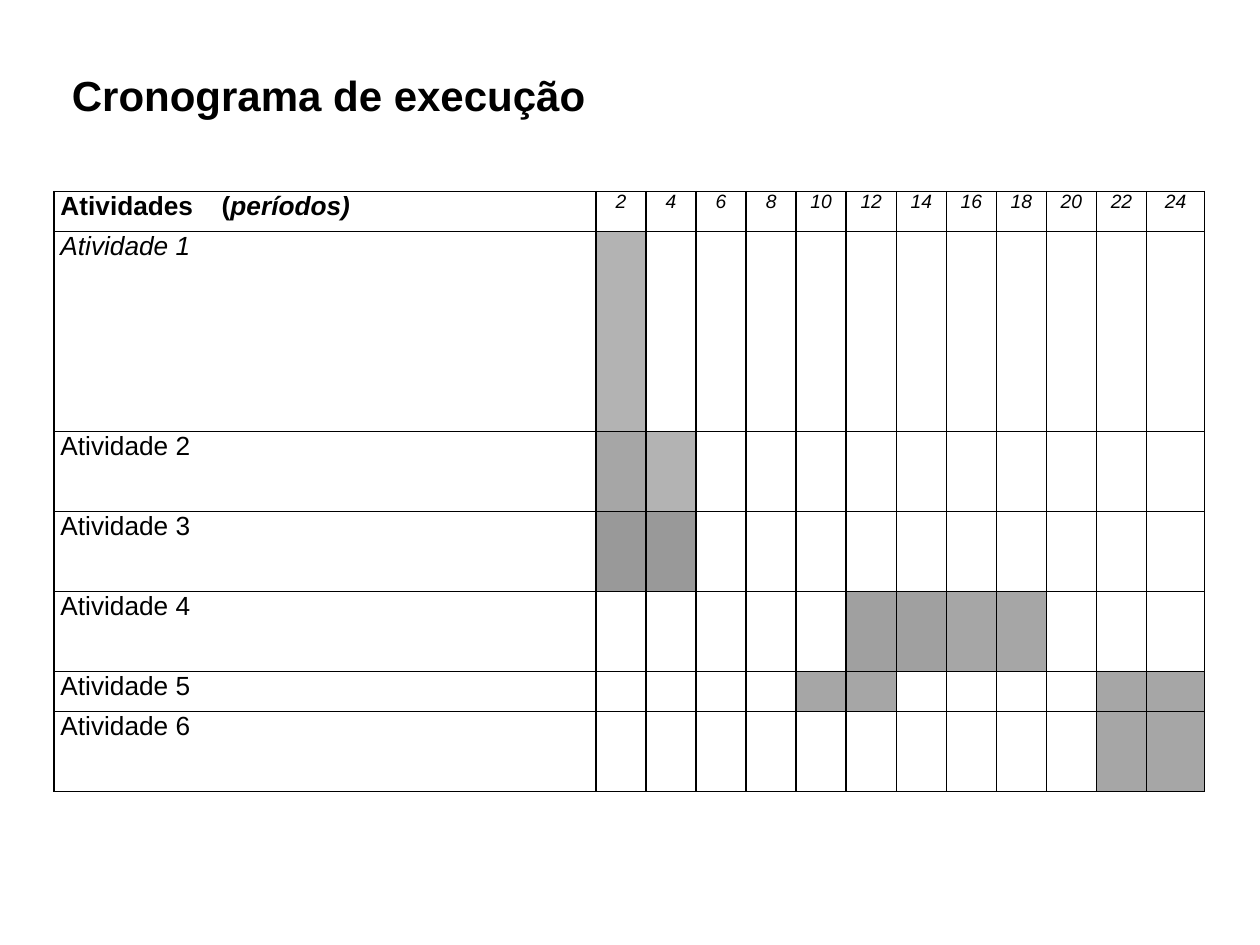
"""Builds a slide with an activity schedule drawn as a shaded table."""
from typing import NamedTuple

from lxml.etree import SubElement
from pptx import Presentation
from pptx.dml.color import RGBColor
from pptx.enum.text import MSO_ANCHOR, PP_ALIGN
from pptx.oxml.ns import qn
from pptx.util import Inches, Pt

FONT, INK, PAPER = "Arial", "000000", "FFFFFF"
LEFT, TOP, WIDTH, HEIGHT = 0.43, 1.52, 9.13, 4.76
NAME_WIDTH, LAST_WIDTH = 4.3, 0.46
PERIODS = range(2, 25, 2)
HEADER_UNITS = 1
CELL_FORMAT = {
    "margin_left": Inches(0.05),
    "margin_right": Inches(0.05),
    "margin_top": 0,
    "margin_bottom": 0,
    "vertical_anchor": MSO_ANCHOR.TOP,
}


class Activity(NamedTuple):
    name: str
    units: int
    shades: dict[int, str]
    italic: bool = False


ACTIVITIES = [
    Activity("Atividade 1", 5, {2: "B3B3B3"}, True),
    Activity("Atividade 2", 2, {2: "A6A6A6", 4: "B3B3B3"}),
    Activity("Atividade 3", 2, dict.fromkeys((2, 4), "999999")),
    Activity("Atividade 4", 2, {12: "A0A0A0", 14: "A0A0A0", 16: "A6A6A6", 18: "A6A6A6"}),
    Activity("Atividade 5", 1, dict.fromkeys((10, 12, 22, 24), "A6A6A6")),
    Activity("Atividade 6", 2, dict.fromkeys((22, 24), "A6A6A6")),
]


def color(value: str) -> RGBColor:
    return RGBColor.from_string(value)


def set_attributes(target, values: dict) -> None:
    for name, value in values.items():
        setattr(target, name, value)


def add_text(paragraph, text: str, size: float, bold: bool = False, italic: bool = False) -> None:
    run = paragraph.add_run()
    run.text = text
    set_attributes(run.font, {"name": FONT, "size": Pt(size), "bold": bold, "italic": italic})
    run.font.color.rgb = color(INK)


def add_borders(cell) -> None:
    properties = cell._tc.get_or_add_tcPr()
    for position, side in enumerate(("a:lnL", "a:lnR", "a:lnT", "a:lnB")):
        line = properties.makeelement(qn(side), {"w": str(Pt(1))})
        properties.insert(position, line)
        SubElement(SubElement(line, qn("a:solidFill")), qn("a:srgbClr"), val=INK)


def format_cell(cell, fill: str = PAPER) -> None:
    set_attributes(cell, CELL_FORMAT)
    cell.fill.solid()
    cell.fill.fore_color.rgb = color(fill)
    add_borders(cell)


def add_title(slide, text: str) -> None:
    title = slide.shapes.title
    box = {"left": 0.47, "top": 0.5, "width": 9.24, "height": 0.51}
    set_attributes(title, {name: Inches(value) for name, value in box.items()})
    title.text_frame.vertical_anchor = MSO_ANCHOR.MIDDLE
    paragraph = title.text_frame.paragraphs[0]
    paragraph.alignment = PP_ALIGN.LEFT
    add_text(paragraph, text, 24, bold=True)


def fill_header(table) -> None:
    paragraph = table.cell(0, 0).text_frame.paragraphs[0]
    paragraph.alignment = PP_ALIGN.JUSTIFY
    tabs = SubElement(paragraph._p.get_or_add_pPr(), qn("a:tabLst"))
    SubElement(tabs, qn("a:tab"), pos=str(Inches(1.28)), algn="l")
    add_text(paragraph, "Atividades\t(", 15, bold=True)
    add_text(paragraph, "períodos)", 15, bold=True, italic=True)
    format_cell(table.cell(0, 0))
    for column, period in enumerate(PERIODS, 1):
        cell = table.cell(0, column)
        paragraph = cell.text_frame.paragraphs[0]
        paragraph.alignment = PP_ALIGN.CENTER
        add_text(paragraph, str(period), 11, italic=True)
        format_cell(cell)


def fill_activity(table, row: int, activity: Activity) -> None:
    name_cell = table.cell(row, 0)
    add_text(name_cell.text_frame.paragraphs[0], activity.name, 15, italic=activity.italic)
    format_cell(name_cell)
    for column, period in enumerate(PERIODS, 1):
        format_cell(table.cell(row, column), activity.shades.get(period, PAPER))


def add_schedule(slide) -> None:
    units = [HEADER_UNITS] + [activity.units for activity in ACTIVITIES]
    period_width = (WIDTH - NAME_WIDTH - LAST_WIDTH) / (len(PERIODS) - 1)
    widths = [NAME_WIDTH] + [period_width] * (len(PERIODS) - 1) + [LAST_WIDTH]
    frame = slide.shapes.add_table(
        len(units), len(widths), Inches(LEFT), Inches(TOP), Inches(WIDTH), Inches(HEIGHT)
    )
    table = frame.table
    set_attributes(table, {"first_row": False, "horz_banding": False})
    for column, width in zip(table.columns, widths):
        column.width = Inches(width)
    for row, count in zip(table.rows, units):
        row.height = Inches(HEIGHT * count / sum(units))
    fill_header(table)
    for row, activity in enumerate(ACTIVITIES, 1):
        fill_activity(table, row, activity)


def main() -> None:
    presentation = Presentation()
    set_attributes(presentation, {"slide_width": Inches(10), "slide_height": Inches(7.5)})
    slide = presentation.slides.add_slide(presentation.slide_layouts[5])
    add_title(slide, "Cronograma de execução")
    add_schedule(slide)
    presentation.save("out.pptx")


if __name__ == "__main__":
    main()
